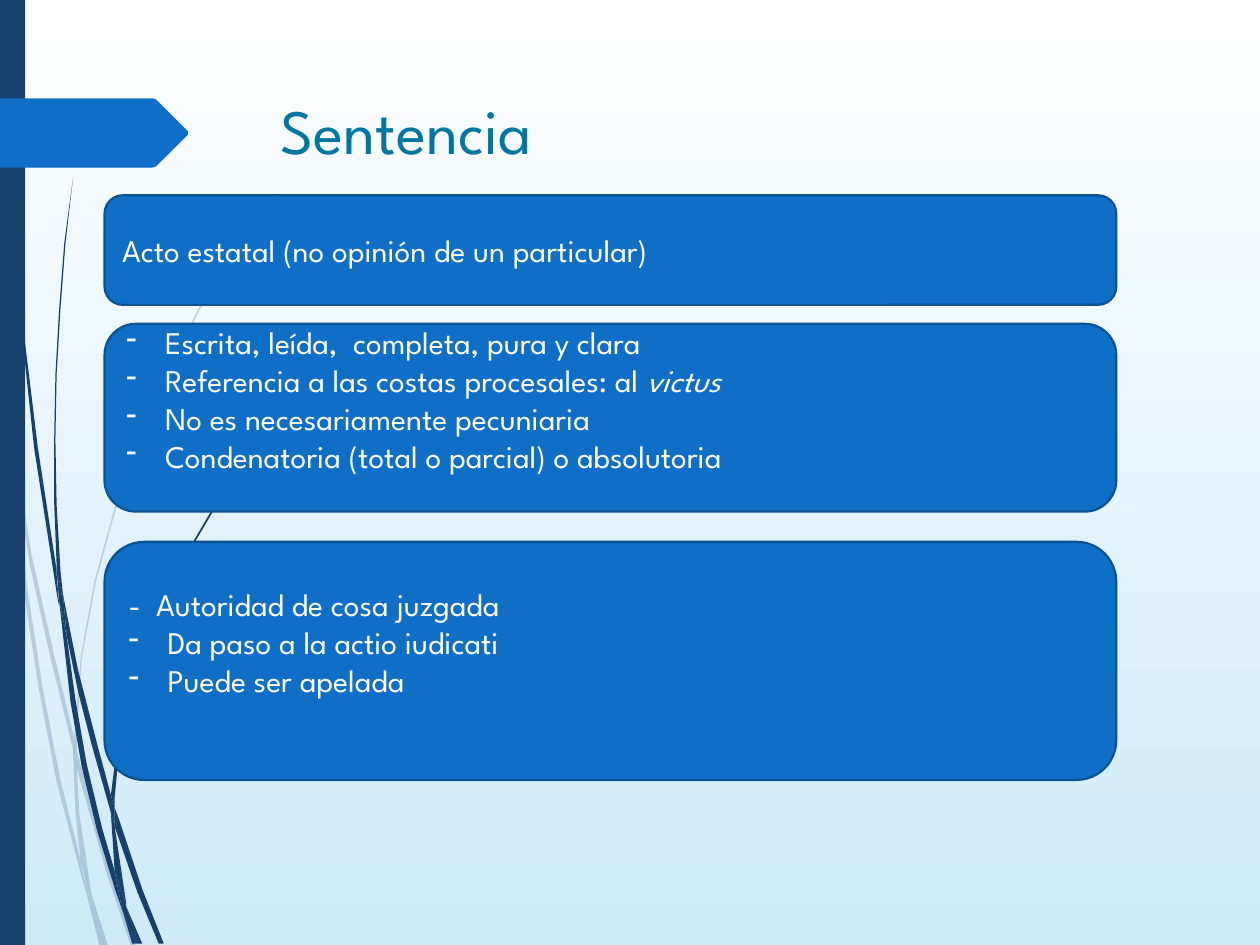
from pptx import Presentation
from pptx.dml.color import RGBColor
from pptx.enum.shapes import MSO_SHAPE as Shape
from pptx.enum.text import MSO_ANCHOR as Anchor, PP_ALIGN as Align
from pptx.util import Inches, Pt
from lxml.etree import SubElement
from pptx.oxml.ns import qn

FONT = "League Spartan"
COLORS = {"navy": "17406D", "blue": "0F6FC6", "edge": "0B5292",
          "title": "0076A3", "white": "FFFFFF", "sky": "CEEAF9"}


def color(name):
    return RGBColor.from_string(COLORS[name])


def outline(points, name):
    """Draw a filled polygon; points are in hundredths of an inch."""
    spots = [(Inches(x / 100), Inches(y / 100)) for x, y in points]
    pen = slide.shapes.build_freeform(*spots[0])
    pen.add_line_segments(spots[1:], close=True)
    form = pen.convert_to_shape()
    form.shadow.inherit = False
    form.fill.solid()
    form.fill.fore_color.rgb = color(name)
    form.line.fill.background()
    return form


deck = Presentation()
deck.slide_width, deck.slide_height = Inches(10), Inches(7.5)
slide = deck.slides.add_slide(deck.slide_layouts[5])

# Background, white at the top to sky blue
back = slide.background.fill
back.gradient()
back.gradient_angle = 270
for stop, name, spot in zip(back.gradient_stops, ("white", "sky"), (0, 1)):
    stop.color.rgb = color(name)
    stop.position = spot

# Grass blades: pale ones behind, dark ones in front
pale = [
    [(8, 350), (6, 322), (0, 282), (0, 299), (7, 344)],
    [(40, 522), (59, 599), (59, 586), (43, 520), (25, 440), (10, 345), (12, 376), (24, 450)],
    [(64, 607), (61, 596), (61, 610), (85, 694), (104, 751), (108, 751), (88, 692)],
    [(83, 751), (86, 751), (73, 711)],
    [(64, 683), (48, 619), (34, 547), (22, 469), (12, 376), (8, 350), (19, 470),
     (31, 548), (45, 621), (64, 693), (70, 714), (69, 707)],
    [(58, 599), (60, 646), (64, 683), (67, 692), (73, 711), (72, 706), (63, 646),
     (61, 610), (61, 608)],
    [(61, 584), (65, 522), (76, 462), (92, 404), (111, 349), (134, 295), (159, 245),
     (187, 198), (201, 175), (217, 154), (217, 153), (201, 175), (186, 197),
     (158, 244), (133, 294), (110, 348), (91, 403), (75, 461), (64, 522), (59, 584),
     (59, 586), (61, 596)],
    [(70, 714), (79, 751), (82, 751)],
    [(61, 608), (61, 610), (61, 596), (59, 586), (58, 599)],
    [(67, 692), (65, 683), (69, 707), (70, 714), (82, 751), (83, 751), (73, 711)],
]
dark = [
    [(5, 110), (14, 233), (27, 355), (46, 477), (47, 481), (45, 457), (45, 453),
     (30, 355), (15, 232), (6, 109), (4, 48), (3, 0), (2, 0), (3, 48)],
    [(73, 592), (88, 645), (88, 633), (88, 631), (77, 590), (62, 532), (50, 472),
     (53, 505), (62, 549)],
    [(94, 649), (91, 641), (91, 656), (109, 708), (126, 749), (130, 749), (113, 706)],
    [(91, 691), (81, 657), (69, 607), (60, 556), (53, 505), (47, 477), (56, 557),
     (65, 609), (77, 659), (92, 708), (97, 722), (96, 717)],
    [(50, 472), (48, 453), (45, 401), (44, 349), (45, 297), (48, 245), (52, 193),
     (58, 141), (51, 193), (47, 245), (44, 297), (43, 349), (43, 399), (45, 449),
     (49, 472)],
    [(110, 749), (113, 749), (100, 719)],
    [(47, 477), (53, 505), (50, 472), (49, 472), (45, 449), (45, 453)],
    [(91, 633), (95, 592), (103, 552), (115, 513), (131, 476), (149, 440), (169, 406),
     (191, 374), (203, 359), (216, 344), (215, 344), (203, 358), (191, 373),
     (168, 405), (148, 439), (129, 474), (113, 512), (101, 551), (93, 591),
     (88, 631), (91, 641)],
    [(97, 722), (105, 749), (108, 749)],
    [(88, 645), (91, 691), (96, 706), (100, 719), (100, 716), (91, 656), (90, 651)],
    [(88, 645), (90, 651), (91, 656), (91, 641), (88, 631), (88, 633)],
    [(96, 706), (91, 691), (96, 717), (97, 722), (108, 749), (110, 749), (100, 719)],
]
for points in pale:
    blade = outline(points, "navy")
    tint = blade.fill._xPr.find(qn("a:solidFill"))[0]
    SubElement(tint, qn("a:alpha"), val="20000")
for points in dark:
    outline(points, "navy")

# Side bar and arrow tab
bar = slide.shapes.add_shape(Shape.RECTANGLE, 0, 0, Inches(0.2), Inches(7.5))
bar.shadow.inherit = False
bar.fill.solid()
bar.fill.fore_color.rgb = color("navy")
bar.line.fill.background()
outline([(0, 78), (121, 78), (124, 79), (149, 104), (149, 107),
         (124, 132), (121, 133), (0, 133)], "blue")

# Title
title = slide.shapes.title
title.left, title.top = Inches(2.13), Inches(0.68)
title.width, title.height = Inches(7.21), Inches(1.4)
title.text_frame.text = "Sentencia"
title.text_frame.vertical_anchor = Anchor.TOP
head = title.text_frame.paragraphs[0]
head.alignment = Align.LEFT
font = head.runs[0].font
font.name, font.size = FONT, Pt(36)
font.color.rgb = color("title")

# Boxes: top, height, bottom margin, lines as (bulleted, runs)
boxes = [
    (1.55, 0.87, 0.05, [(False, ["Acto estatal (no opinión de un particular)"])]),
    (2.57, 1.49, 0.35, [
        (True, ["Escrita, leída,  completa, pura y clara"]),
        (True, ["Referencia a las costas procesales: al ", "victus"]),
        (True, ["No es necesariamente pecuniaria"]),
        (True, ["Condenatoria (total o parcial) o absolutoria"])]),
    (4.3, 1.89, 0.35, [
        (False, ["-  Autoridad de cosa juzgada"]),
        (True, ["Da paso a la actio iudicati"]),
        (True, ["Puede ser apelada"])]),
]
for top, high, foot, lines in boxes:
    box = slide.shapes.add_shape(Shape.ROUNDED_RECTANGLE, Inches(0.83), Inches(top),
                                 Inches(8.03), Inches(high))
    box.shadow.inherit = False
    box.fill.solid()
    box.fill.fore_color.rgb = color("blue")
    box.line.color.rgb = color("edge")
    box.line.width = Pt(1.25)
    frame = box.text_frame
    frame.word_wrap = True
    frame.vertical_anchor = Anchor.MIDDLE
    frame.margin_bottom = Inches(foot)
    for i, (dash, parts) in enumerate(lines):
        para = frame.add_paragraph() if i else frame.paragraphs[0]
        para.alignment = Align.LEFT
        if dash:
            props = para._p.get_or_add_pPr()
            props.set("marL", str(Inches(0.31)))
            props.set("indent", str(-Inches(0.31)))
            SubElement(props, qn("a:buChar"), char="-")
        for part in parts:
            run = para.add_run()
            run.text = part
            run.font.name, run.font.size = FONT, Pt(18)
            run.font.color.rgb = color("white")
            if part == "victus":
                run.font.italic = True

deck.save("out.pptx")
